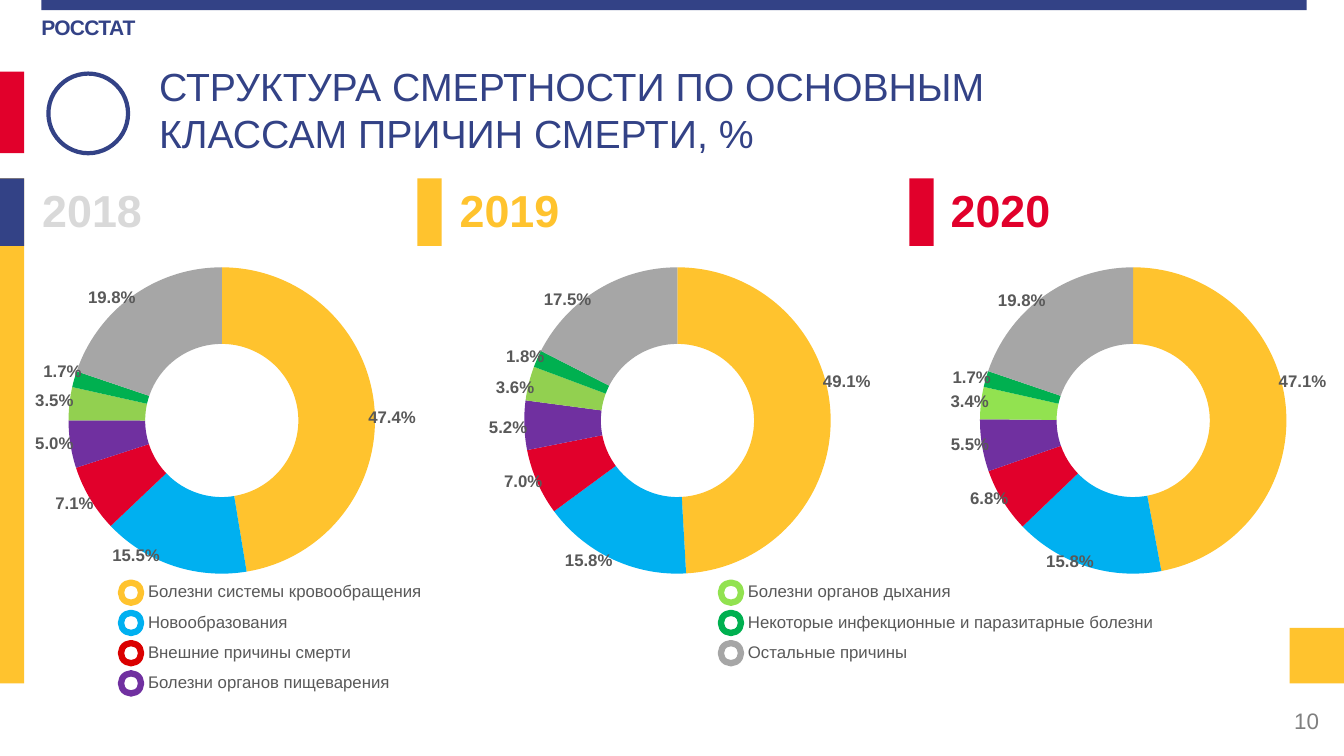
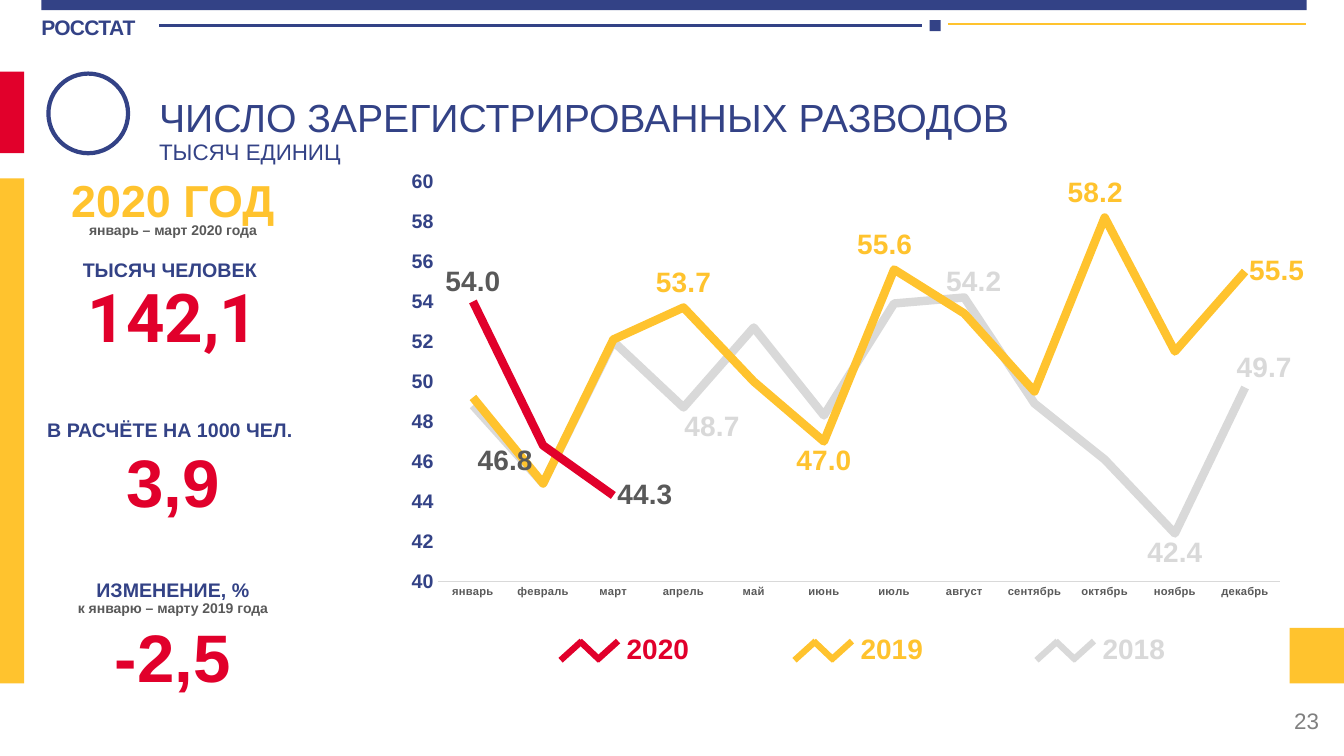
"""Builds two slides: mortality by cause of death and registered divorces."""
from math import cos, pi, sin

from pptx import Presentation
from pptx.chart.data import CategoryChartData
from pptx.dml.color import RGBColor
from pptx.enum.chart import XL_CHART_TYPE as ChartType
from pptx.enum.chart import XL_LABEL_POSITION as LabelPosition
from pptx.enum.chart import XL_TICK_MARK as TickMark
from pptx.enum.shapes import MSO_CONNECTOR as Connector
from pptx.enum.shapes import MSO_SHAPE as Shape
from pptx.enum.text import MSO_ANCHOR as Anchor
from pptx.enum.text import PP_ALIGN as Align
from pptx.oxml import parse_xml
from pptx.oxml.ns import nsdecls, qn
from pptx.util import Inches, Pt

NAVY = RGBColor(0x33, 0x42, 0x86)
RED = RGBColor(0xE1, 0x00, 0x2B)
DARK_RED = RGBColor(0xDA, 0x00, 0x00)
YELLOW = RGBColor(0xFF, 0xC3, 0x2E)
BLUE = RGBColor(0x00, 0xB0, 0xF0)
PURPLE = RGBColor(0x70, 0x30, 0xA0)
OLIVE = RGBColor(0x92, 0xD0, 0x50)
LIME = RGBColor(0x92, 0xE2, 0x50)
GREEN = RGBColor(0x00, 0xB0, 0x50)
GRAY = RGBColor(0xA6, 0xA6, 0xA6)
PALE = RGBColor(0xD9, 0xD9, 0xD9)
TEXT_GRAY = RGBColor(0x59, 0x59, 0x59)
PAGE_GRAY = RGBColor(0x80, 0x80, 0x80)

CAUSES = [
    ("Болезни системы кровообращения", YELLOW),
    ("Новообразования", BLUE),
    ("Внешние причины смерти", DARK_RED),
    ("Болезни органов пищеварения", PURPLE),
    ("Болезни органов дыхания", LIME),
    ("Некоторые инфекционные и паразитарные болезни", GREEN),
    ("Остальные причины", GRAY),
]
RING_WIDTH, RING_HEIGHT, RING_DIAMETER = 4, 3.31, 3.04
RINGS = [
    ("2018", 0.24, 0, 0.32, NAVY, PALE, OLIVE,
     [0.474, 0.155, 0.071, 0.05, 0.035, 0.017, 0.198],
     [(1.69, -0.03), (-0.85, 1.34), (-1.46, 0.83), (-1.66, 0.23),
      (-1.66, -0.2), (-1.58, -0.48), (-1.09, -1.22)]),
    ("2019", 4.76, 4.14, 4.46, YELLOW, YELLOW, OLIVE,
     [0.491, 0.158, 0.07, 0.052, 0.036, 0.018, 0.175],
     [(1.68, -0.38), (-0.88, 1.39), (-1.53, 0.61), (-1.68, 0.07),
      (-1.61, -0.33), (-1.51, -0.63), (-1.09, -1.2)]),
    ("2020", 9.28, 9.02, 9.33, RED, RED, LIME,
     [0.471, 0.158, 0.068, 0.055, 0.034, 0.017, 0.198],
     [(1.68, -0.38), (-0.63, 1.4), (-1.43, 0.77), (-1.62, 0.24),
      (-1.62, -0.19), (-1.6, -0.43), (-1.1, -1.19)]),
]

MONTHS = ["январь", "февраль", "март", "апрель", "май", "июнь", "июль",
          "август", "сентябрь", "октябрь", "ноябрь", "декабрь"]
ABOVE, BELOW, RIGHT = LabelPosition.ABOVE, LabelPosition.BELOW, LabelPosition.RIGHT
DIVORCES = [
    ("2018", PALE, PALE,
     [48.8, 44.9, 52.0, 48.7, 52.7, 48.3, 53.9, 54.2, 48.9, 46.1, 42.4, 49.7],
     {3: (BELOW, 0.03, 0), 7: (ABOVE, 0.01, 0.01), 10: (BELOW, 0, 0),
      11: (ABOVE, 0.02, 0)}),
    ("2019", YELLOW, YELLOW,
     [49.2, 44.9, 52.1, 53.7, 50.0, 47.0, 55.6, 53.4, 49.5, 58.2, 51.5, 55.5],
     {3: (ABOVE, 0, -0.01), 5: (BELOW, 0, 0), 6: (ABOVE, -0.01, -0.01),
      9: (ABOVE, -0.01, -0.01), 11: (RIGHT, 0, 0)}),
    ("2020", RED, TEXT_GRAY, [54.0, 46.8, 44.3] + [None] * 9,
     {0: (ABOVE, 0, 0), 1: (BELOW, -0.04, -0.01), 2: (RIGHT, 0, 0)}),
]
LINE_LEGEND = [("2020", RED, 5.56), ("2019", YELLOW, 7.88), ("2018", PALE, 10.28)]
KEY_FIGURES = [
    ("2020 ГОД", 0.28, 1.98, 32, YELLOW, "Arial"),
    ("январь – март 2020 года", 0.28, 2.28, 10, TEXT_GRAY, "Arial"),
    ("ТЫСЯЧ ЧЕЛОВЕК", 0.25, 2.68, 14, NAVY, "Arial"),
    ("142,1", 0.28, 3.13, 48, RED, "Roboto"),
    ("В РАСЧЁТЕ НА 1000 ЧЕЛ.", 0.25, 4.26, 14, NAVY, "Arial"),
    ("3,9", 0.28, 4.77, 48, RED, "Arial"),
    ("ИЗМЕНЕНИЕ, %", 0.28, 5.85, 14, NAVY, "Arial"),
    ("к январю – марту 2019 года", 0.28, 6.03, 10, TEXT_GRAY, "Arial"),
    ("-2,5", 0.28, 6.5, 48, RED, "Arial"),
]


def set_font(font, size, color, bold=False, name="Arial"):
    """Apply one text format to a font."""
    font.size, font.bold, font.name = Pt(size), bold, name
    font.color.rgb = color


def add_text(slide, text, left, top, width, height, *, size, color, bold=False,
             font="Arial", align=Align.LEFT, anchor=Anchor.MIDDLE, inset=0.1,
             tracking=None):
    """Add a text box with one formatted paragraph and return its frame."""
    box = slide.shapes.add_textbox(
        Inches(left), Inches(top), Inches(width), Inches(height))
    frame = box.text_frame
    frame.word_wrap = True
    frame.vertical_anchor = anchor
    frame.margin_left = frame.margin_right = Inches(inset)
    frame.margin_top = frame.margin_bottom = Inches(inset / 2)
    para = frame.paragraphs[0]
    para.alignment = align
    span = para.add_run()
    span.text = text
    set_font(span.font, size, color, bold, font)
    if tracking is not None:
        span.font._element.set("spc", str(tracking))
    return frame


def add_block(slide, left, top, width, height, color):
    """Add a plain filled rectangle."""
    block = slide.shapes.add_shape(
        Shape.RECTANGLE, Inches(left), Inches(top), Inches(width), Inches(height))
    block.shadow.inherit = False
    block.fill.solid()
    block.fill.fore_color.rgb = color
    block.line.fill.background()


def add_circle(slide, left, top, size, color, weight):
    """Add an outlined circle."""
    circle = slide.shapes.add_shape(
        Shape.OVAL, Inches(left), Inches(top), Inches(size), Inches(size))
    circle.shadow.inherit = False
    circle.fill.background()
    circle.line.color.rgb = color
    circle.line.width = Pt(weight)


def add_line(slide, start, end, color, weight):
    """Add a straight line between two points."""
    line = slide.shapes.add_connector(
        Connector.STRAIGHT, *map(Inches, start), *map(Inches, end))
    line.line.color.rgb = color
    line.line.width = Pt(weight)
    line._element.spPr.append(parse_xml(f"<a:effectLst {nsdecls('a')}/>"))


def add_zigzag(slide, left, top, color):
    """Add the zigzag sign of a line series."""
    bottom = top + 0.19
    for low, high in [(0, 0.21), (0.36, 0.57), (0.39, 0.19)]:
        add_line(slide, (left + low, bottom), (left + high, top), color, 4.5)


def make_layout(x, y, width=None, height=None):
    """Return a chart layout: an offset, or an inner plot area if sized."""
    parts = [("x", x), ("y", y)]
    if width is not None:
        parts = [("layoutTarget", "inner"), ("xMode", "edge"), ("yMode", "edge"),
                 *parts, ("w", width), ("h", height)]
    tags = "".join(f'<c:{tag} val="{value}"/>' for tag, value in parts)
    return parse_xml(f"<c:layout {nsdecls('c')}><c:manualLayout>{tags}"
                     "</c:manualLayout></c:layout>")


def add_chart(slide, kind, bounds, data, plot_area):
    """Add a chart without title and legend, with a fixed plot area."""
    chart = slide.shapes.add_chart(kind, *map(Inches, bounds), data).chart
    chart.has_title = chart.has_legend = False
    set_font(chart.font, 10, TEXT_GRAY)
    chart.plots[0].vary_by_categories = False
    area = chart._chartSpace.chart.plotArea
    for layout in area.findall(qn("c:layout")):
        area.remove(layout)
    area.insert(0, make_layout(*plot_area))
    return chart


def label_point(series, index, offset, number_format, size, color, position=None):
    """Label one point, moved by a share of the chart size."""
    label = series.points[index].data_label
    set_font(label.font, size, color, True)
    if position is not None:
        label.position = position
    element = series._element.xpath(f'c:dLbls/c:dLbl[c:idx/@val="{index}"]')[0]
    element.insert(1, make_layout(*offset))
    element.insert(2, parse_xml(
        f'<c:numFmt {nsdecls("c")} formatCode="{number_format}" sourceLinked="0"/>'))


def add_ring(slide, left, breathing_color, shares, label_spots):
    """Add the doughnut chart of one year."""
    data = CategoryChartData(number_format="0.0%")
    data.categories = [name for name, _ in CAUSES]
    data.add_series("Series 1", shares)
    chart = add_chart(
        slide, ChartType.DOUGHNUT, (left, 2.52, RING_WIDTH, RING_HEIGHT), data,
        (0.11, 0.04, RING_DIAMETER / RING_WIDTH, RING_DIAMETER / RING_HEIGHT))
    chart.plots[0]._element.find(qn("c:holeSize")).set("val", "57")
    series = chart.plots[0].series[0]
    series.data_labels.show_value = True
    colors = [YELLOW, BLUE, RED, PURPLE, breathing_color, GREEN, GRAY]
    middle = RING_DIAMETER * 3 / 8
    passed = 0
    for index, (share, color, (x, y)) in enumerate(zip(shares, colors, label_spots)):
        fill = series.points[index].format.fill
        fill.solid()
        fill.fore_color.rgb = color
        angle = 2 * pi * (passed + share / 2)
        passed += share
        offset = (round((x - middle * sin(angle)) / RING_WIDTH, 4),
                  round((y + middle * cos(angle)) / RING_HEIGHT, 4))
        label_point(series, index, offset, "0.0%", 12, TEXT_GRAY)
    for leader in series._element.xpath("c:dLbls/c:showLeaderLines"):
        leader.set("val", "0")


def add_divorce_chart(slide):
    """Add the line chart of divorces by month."""
    data = CategoryChartData(number_format="0.0")
    data.categories = MONTHS
    for name, _, _, values, _ in DIVORCES:
        data.add_series(name, values)
    chart = add_chart(slide, ChartType.LINE, (3.57, 1.65, 9.42, 4.43), data,
                      (0.082, 0.034, 0.887, 0.896))
    months, scale = chart.category_axis, chart.value_axis
    for axis, size, color in [(months, 8, TEXT_GRAY), (scale, 14, NAVY)]:
        axis.major_tick_mark = axis.minor_tick_mark = TickMark.NONE
        axis.has_major_gridlines = False
        set_font(axis.tick_labels.font, size, color, True)
    months.format.line.color.rgb = PALE
    months.format.line.width = Pt(0.75)
    scale.format.line.fill.background()
    scale.minimum_scale, scale.maximum_scale, scale.major_unit = 40, 60, 2
    scale.tick_labels.number_format = "0"
    scale.tick_labels.number_format_is_linked = False
    for series, (_, color, label_color, _, labels) in zip(chart.series, DIVORCES):
        series.smooth = False
        series.format.line.color.rgb = color
        series.format.line.width = Pt(6)
        series.data_labels.show_value = False
        for index, (position, x, y) in labels.items():
            label_point(series, index, (x, y), "#,##0.0", 20, label_color, position)


def add_frame(deck, number):
    """Add a slide with the shared bands, header, circle and page number."""
    slide = deck.slides.add_slide(deck.slide_layouts[6])
    add_text(slide, "РОССТАТ", 0.41, 0.14, 1.15, 0.25, size=15, color=NAVY,
             bold=True, inset=0, tracking=-50)
    add_block(slide, 0.41, 0, 12.55, 0.1, NAVY)
    add_block(slide, 0, 0.71, 0.24, 0.81, RED)
    add_block(slide, 0, 1.77, 0.24, 5.01, YELLOW)
    add_block(slide, 12.79, 6.23, 0.54, 0.55, YELLOW)
    add_circle(slide, 0.48, 0.73, 0.79, NAVY, 3)
    add_text(slide, str(number), 10.18, 6.95, 3, 0.4, size=16, color=PAGE_GRAY,
             align=Align.RIGHT)
    return slide


def build_mortality(deck):
    """Build the slide on causes of death."""
    slide = add_frame(deck, 10)
    add_text(slide, "СТРУКТУРА СМЕРТНОСТИ ПО ОСНОВНЫМ КЛАССАМ ПРИЧИН СМЕРТИ, %",
             1.48, 0.64, 10.04, 0.89, size=28, color=NAVY)
    for year, left, bar, text_left, bar_color, color, breathing, shares, spots in RINGS:
        add_block(slide, bar, 1.77, 0.24, 0.67, bar_color)
        add_text(slide, year, text_left, 1.76, 1.99, 0.64, size=32, color=color,
                 bold=True)
        add_ring(slide, left, breathing, shares, spots)
    for index, (cause, color) in enumerate(CAUSES):
        column, row = divmod(index, 4)
        left, top = 1.2 + 5.95 * column, 5.78 + 0.3 * row
        add_circle(slide, left, top, 0.2, color, 4.5)
        add_text(slide, cause, left + 0.17, top - 0.04, 4.57, 0.25, size=12,
                 color=TEXT_GRAY)


def build_divorces(deck):
    """Build the slide on registered divorces."""
    slide = add_frame(deck, 23)
    add_line(slide, (1.58, 0.25), (9.14, 0.25), NAVY, 2)
    add_line(slide, (9.4, 0.24), (12.95, 0.24), YELLOW, 1.5)
    add_block(slide, 9.22, 0.2, 0.11, 0.11, NAVY)
    frame = add_text(slide, "ЧИСЛО ЗАРЕГИСТРИРОВАННЫХ РАЗВОДОВ", 1.48, 0.88, 11.74,
                     0.8, size=28, color=NAVY, anchor=Anchor.TOP)
    para = frame.add_paragraph()
    para.line_spacing = 0.9
    span = para.add_run()
    span.text = "ТЫСЯЧ ЕДИНИЦ"
    set_font(span.font, 16, NAVY)
    add_divorce_chart(slide)
    for year, color, left in LINE_LEGEND:
        add_zigzag(slide, left, 6.36, color)
        add_text(slide, year, left + 0.5, 6.21, 0.93, 0.44, size=20, color=color,
                 bold=True, align=Align.CENTER)
    for text, left, middle, size, color, font in KEY_FIGURES:
        height = size / 50
        add_text(slide, text, left, middle - height / 2, 2.87, height, size=size,
                 color=color, bold=True, font=font, align=Align.CENTER, inset=0)


def main():
    """Build and save the deck."""
    deck = Presentation()
    deck.slide_width, deck.slide_height = Inches(13.33), Inches(7.5)
    build_mortality(deck)
    build_divorces(deck)
    deck.save("out.pptx")


if __name__ == "__main__":
    main()
